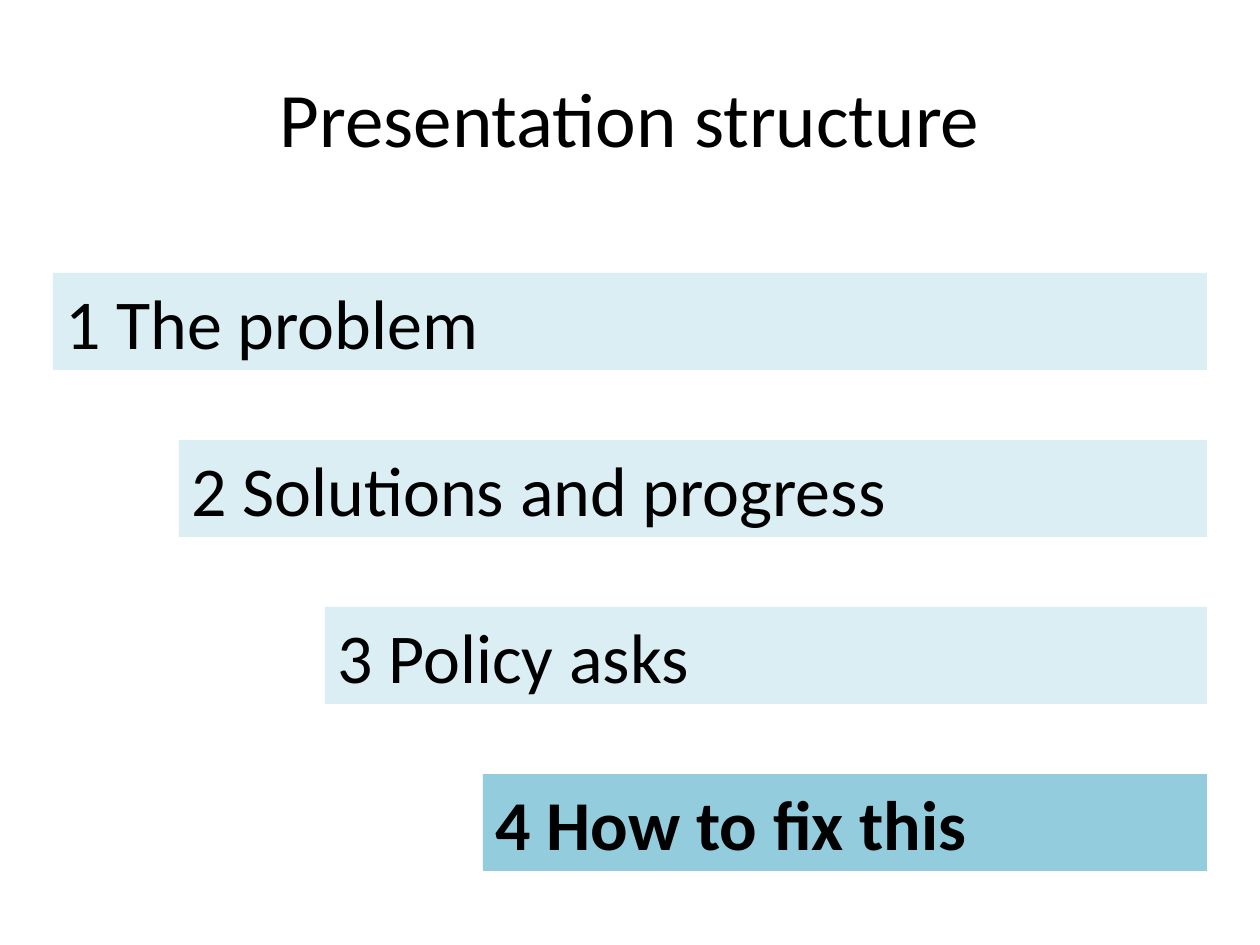
from pptx import Presentation
from pptx.dml.color import RGBColor
from pptx.enum.shapes import MSO_SHAPE
from pptx.enum.text import MSO_ANCHOR, PP_ALIGN
from pptx.util import Pt

RECT = MSO_SHAPE.RECTANGLE
MIDDLE, TOP = MSO_ANCHOR.MIDDLE, MSO_ANCHOR.TOP
LEFT, CENTER = PP_ALIGN.LEFT, PP_ALIGN.CENTER

PX = 914400 // 126
COLORS = {"text": "000000", "pale": "DBEEF4", "active": "93CDDD"}
FONT = "Calibri"

TITLE = "Presentation structure"
# Wording and left edge of each step
STEPS = [
    ("1 The problem", 53),
    ("2 Solutions and progress", 179),
    ("3 Policy asks", 325),
    ("4 How to fix this", 483),
]
ACTIVE = 3
RIGHT, FIRST, PITCH, HEIGHT = 1207, 273, 167, 97


def color(name):
    return RGBColor.from_string(COLORS[name])


def write(shape, text, size, align, anchor, bold=False):
    frame = shape.text_frame
    frame.word_wrap = True
    frame.vertical_anchor = anchor
    para = frame.paragraphs[0]
    para.text = text
    para.alignment = align
    font = para.font
    font.name, font.size, font.bold = FONT, Pt(size), bold
    font.color.rgb = color("text")


deck = Presentation()
deck.slide_width, deck.slide_height = 1260 * PX, 945 * PX
slide = deck.slides.add_slide(deck.slide_layouts[6])

# Title
title = slide.shapes.add_textbox(63 * PX, 38 * PX, 1134 * PX, 157 * PX)
write(title, TITLE, 44, CENTER, MIDDLE)

# Stepped bars sharing one right edge
for i, (text, left) in enumerate(STEPS):
    top = FIRST + i * PITCH
    bar = slide.shapes.add_shape(
        RECT, left * PX, top * PX, (RIGHT - left) * PX, HEIGHT * PX)
    bar.shadow.inherit = False
    bar.fill.solid()
    bar.fill.fore_color.rgb = color("active" if i == ACTIVE else "pale")
    bar.line.fill.background()
    write(bar, text, 40, LEFT, TOP, bold=i == ACTIVE)

deck.save("out.pptx")
